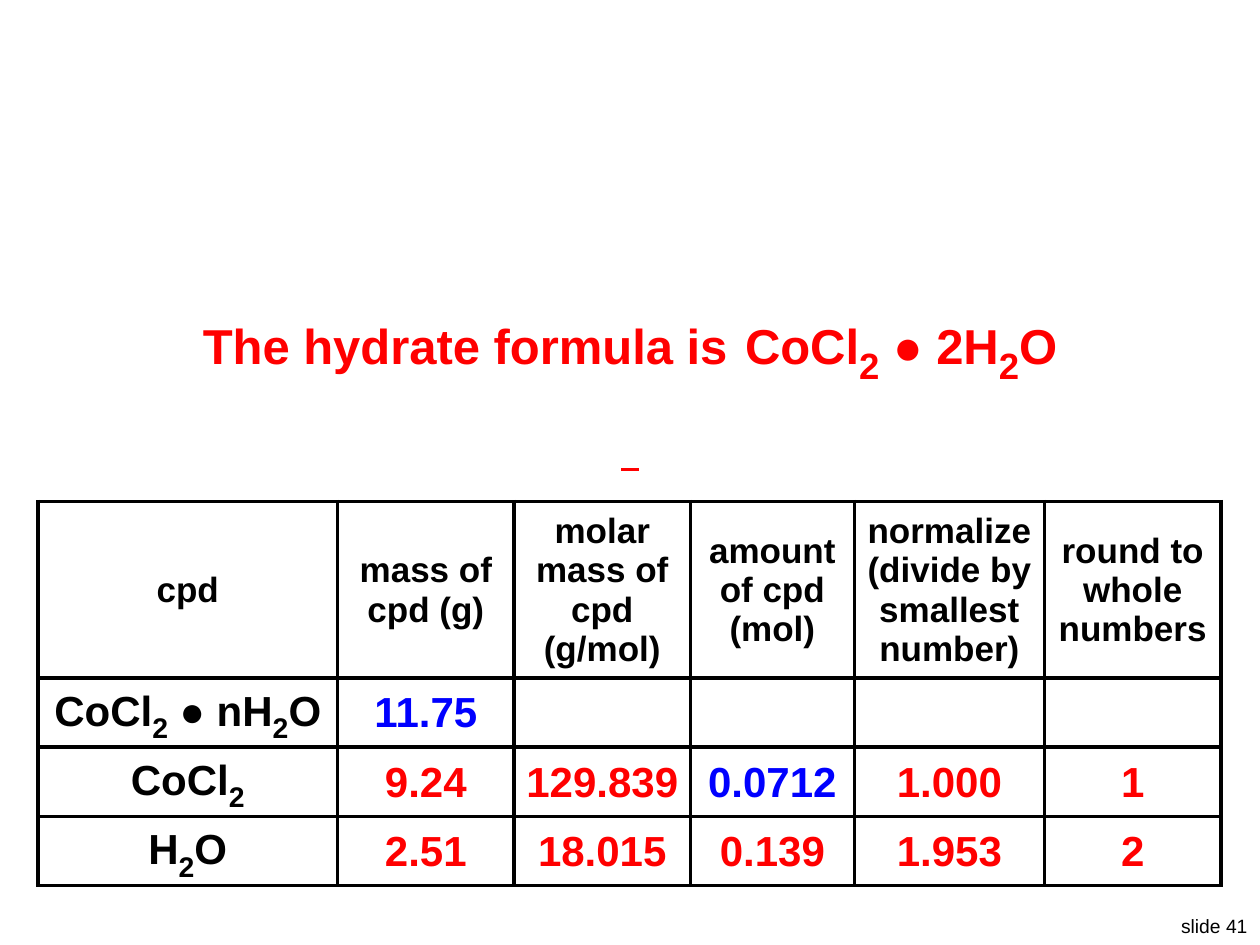
from lxml import etree
from pptx import Presentation
from pptx import util as u
from pptx.dml.color import RGBColor
from pptx.enum import text
from pptx.oxml.ns import qn

BLACK, BLUE, RED = "000000", "0000FF", "FF0000"
COLUMN_WIDTHS = [2.38, 1.4, 1.4, 1.3, 1.51, 1.4]
ROW_HEIGHTS = [1.4, 0.55, 0.55, 0.55]
ROWS = [
    ["cpd", "mass of cpd (g)", "molar mass of cpd (g/mol)", "amount of cpd (mol)",
     "normalize (divide by smallest number)", "round to whole numbers"],
    ["CoCl_2_ ● nH_2_O", "11.75", "", "", "", ""],
    ["CoCl_2_", "9.24", "129.839", "0.0712", "1.000", "1"],
    ["H_2_O", "2.51", "18.015", "0.139", "1.953", "2"],
]
GIVEN_VALUES = {"11.75", "0.0712"}


def color(hex_value):
    return RGBColor.from_string(hex_value)


def style(para, size, hex_value, bold=True, align=text.PP_ALIGN.CENTER):
    para.alignment = align
    para.font.name = "Arial"
    para.font.size = u.Pt(size)
    para.font.bold = bold
    para.font.color.rgb = color(hex_value)


def add_formula(para, formula, subscript_size):
    for index, part in enumerate(formula.split("_")):
        if not part:
            continue
        span = para.add_run()
        span.text = part
        if index % 2:
            span.font.size = u.Pt(subscript_size)
            span.font._element.set("baseline", "-25000")


def place(shape, box):
    shape.left, shape.top, shape.width, shape.height = map(u.Inches, box)


def add_conclusion(page, box):
    title = page.shapes.title
    place(title, box)
    frame = title.text_frame
    frame.word_wrap = True
    frame.auto_size = text.MSO_AUTO_SIZE.NONE
    frame.vertical_anchor = text.MSO_ANCHOR.TOP
    answer, rule = frame.paragraphs[0], frame.add_paragraph()
    style(answer, 28, RED)
    style(rule, 36, RED)
    rule.space_before = u.Pt(7)
    add_formula(answer, "The hydrate formula is", 36)
    gap = answer.add_run()
    gap.text = " "
    gap.font.size = u.Pt(36)
    add_formula(answer, "CoCl_2_ ", 36)
    dot = answer.add_run()
    dot.text = "●"
    dot.font.bold = False
    add_formula(answer, " 2H_2_O", 36)
    underlined = rule.add_run()
    underlined.text = " "
    underlined.font.underline = True


def add_borders(cell):
    properties = cell._tc.get_or_add_tcPr()
    for position, side in enumerate(["lnL", "lnR", "lnT", "lnB"]):
        line = etree.Element(qn(f"a:{side}"), w=str(u.Pt(2.25)))
        fill = etree.SubElement(line, qn("a:solidFill"))
        etree.SubElement(fill, qn("a:srgbClr"), val=BLACK)
        properties.insert(position, line)


def fill_cell(cell, value, size, hex_value):
    cell.fill.background()
    cell.margin_left = cell.margin_right = cell.margin_top = u.Inches(0.01)
    cell.margin_bottom = 0
    cell.vertical_anchor = text.MSO_ANCHOR.MIDDLE
    para = cell.text_frame.paragraphs[0]
    style(para, size, hex_value)
    add_formula(para, value, 28)
    add_borders(cell)


def add_mole_table(page, box):
    frame = page.shapes.add_table(len(ROWS), len(COLUMN_WIDTHS), *map(u.Inches, box))
    table = frame.table
    table.horz_banding = False
    for column, width in zip(table.columns, COLUMN_WIDTHS):
        column.width = u.Inches(width)
    for row, height in zip(table.rows, ROW_HEIGHTS):
        row.height = u.Inches(height)
    for r, values in enumerate(ROWS):
        for c, value in enumerate(values):
            label = r == 0 or c == 0
            hex_value = BLACK if label else BLUE if value in GIVEN_VALUES else RED
            fill_cell(table.cell(r, c), value, 24 if r else 20, hex_value)


def add_page_number(page, box):
    frame = page.shapes.add_textbox(*map(u.Inches, box)).text_frame
    frame.word_wrap = False
    para = frame.paragraphs[0]
    para.text = "slide 41"
    style(para, 11, BLACK, bold=False, align=text.PP_ALIGN.RIGHT)


def main():
    deck = Presentation()
    deck.slide_width, deck.slide_height = u.Inches(10), u.Inches(7.5)
    page = deck.slides.add_slide(deck.slide_layouts[5])
    add_page_number(page, (9.25, 7.21, 0.75, 0.29))
    add_mole_table(page, (0.3, 3.98, 9.4, 3.06))
    add_conclusion(page, (0.2, 2.34, 9.6, 1.02))
    deck.save("out.pptx")


if __name__ == "__main__":
    main()
